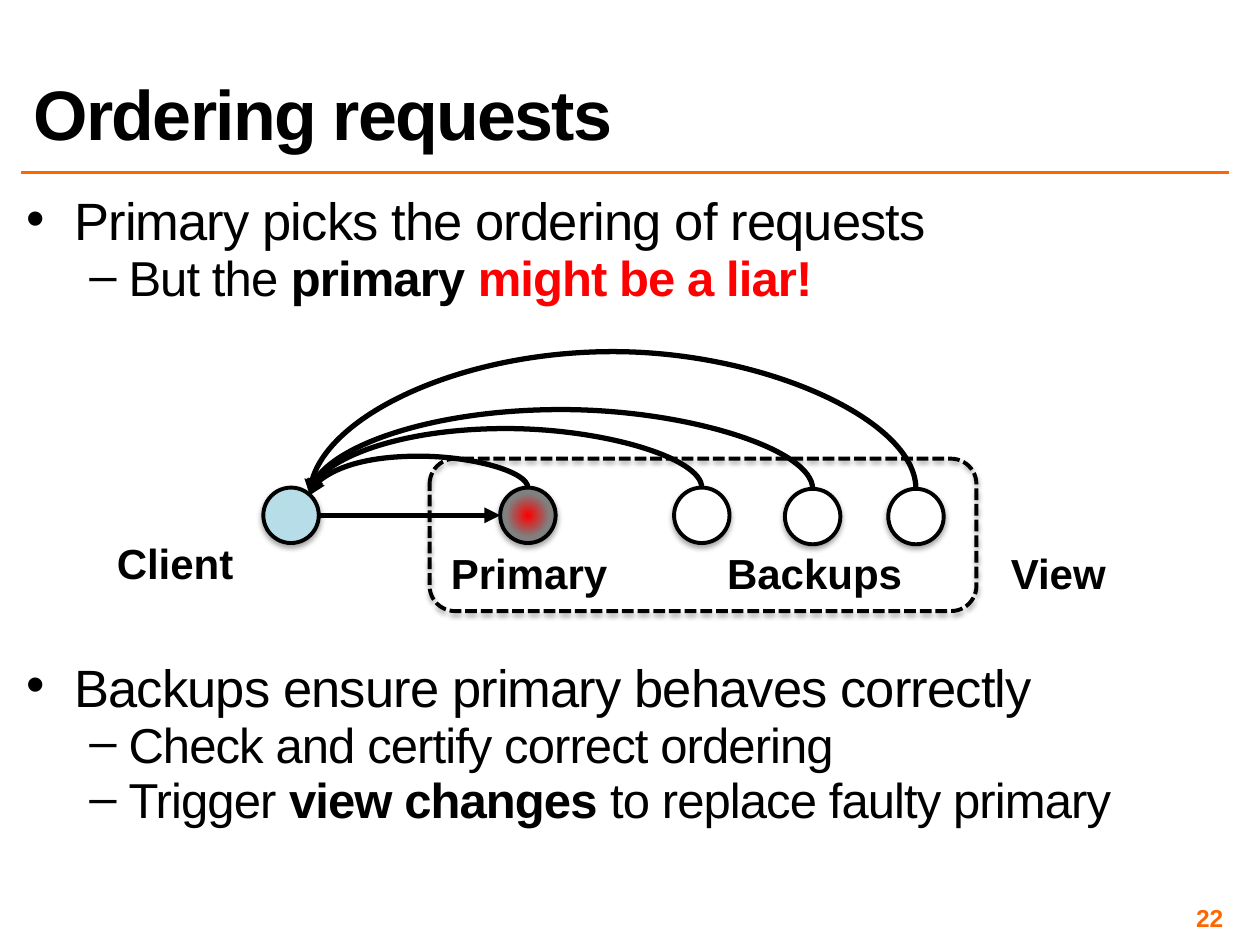
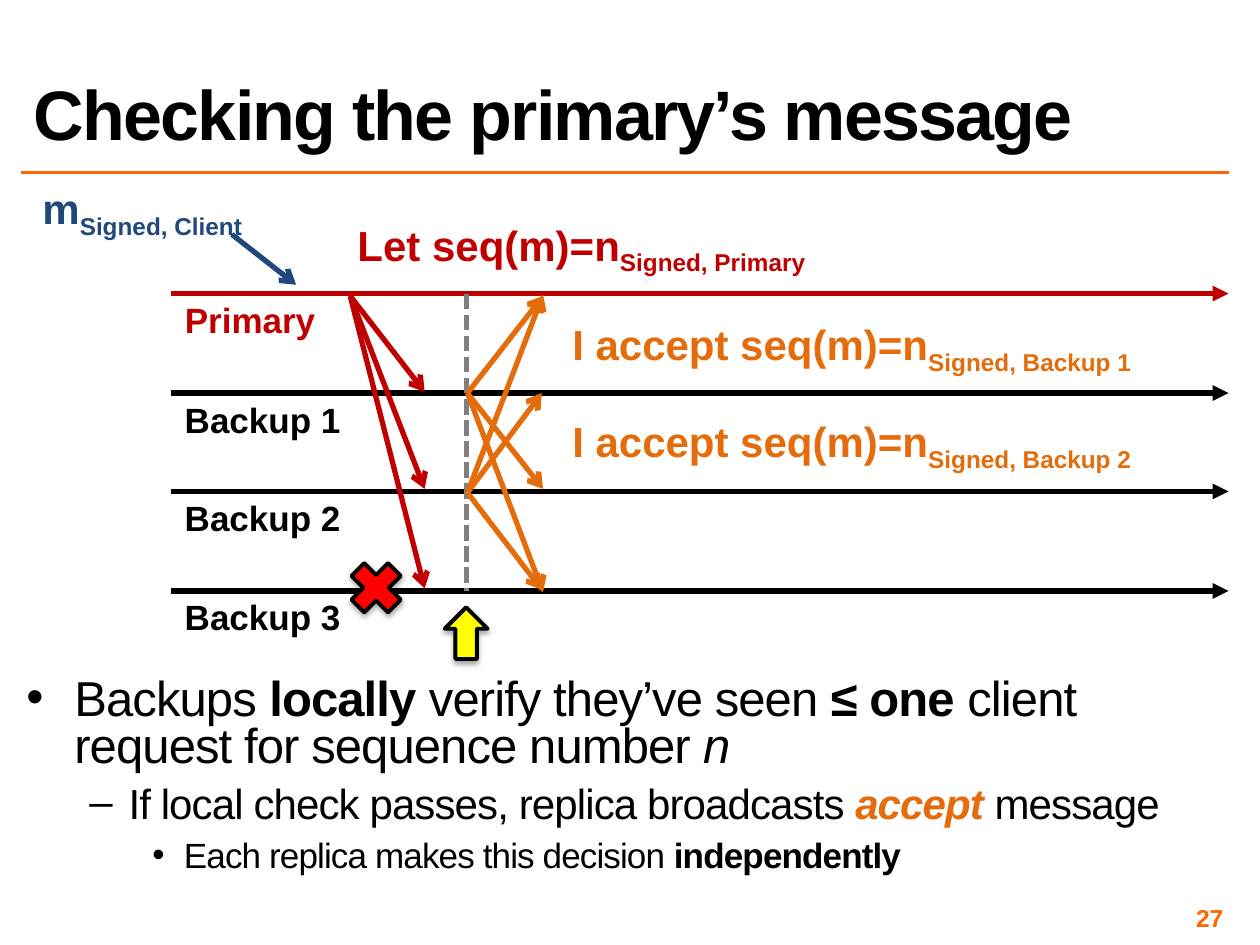
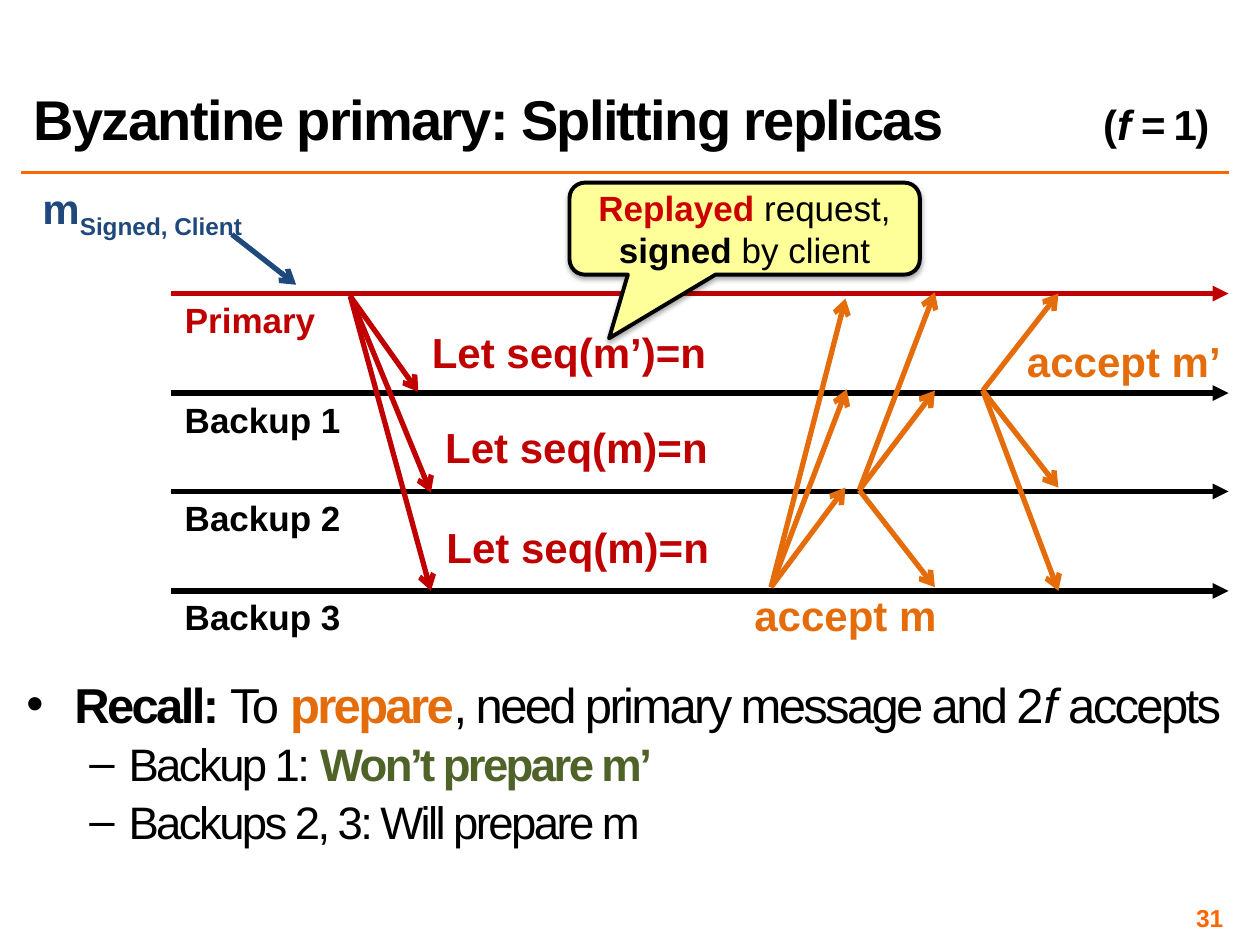
from lxml import etree
from pptx import Presentation
from pptx.dml.color import RGBColor
from pptx.enum.dml import MSO_LINE
from pptx.enum.shapes import MSO_CONNECTOR, MSO_SHAPE
from pptx.enum.text import MSO_ANCHOR, PP_ALIGN
from pptx.oxml.ns import qn
from pptx.util import Inches, Pt

STRAIGHT, CURVE = MSO_CONNECTOR.STRAIGHT, MSO_CONNECTOR.CURVE
OVAL, ROUNDED = MSO_SHAPE.OVAL, MSO_SHAPE.ROUNDED_RECTANGLE
CROSS, UP_ARROW = MSO_SHAPE.CROSS, MSO_SHAPE.UP_ARROW
CALLOUT = MSO_SHAPE.ROUNDED_RECTANGULAR_CALLOUT
DASHED = MSO_LINE.SQUARE_DOT
LEFT, CENTER, RIGHT = PP_ALIGN.LEFT, PP_ALIGN.CENTER, PP_ALIGN.RIGHT
TOP, MIDDLE, BOTTOM = MSO_ANCHOR.TOP, MSO_ANCHOR.MIDDLE, MSO_ANCHOR.BOTTOM

BLACK = RGBColor(0x00, 0x00, 0x00)
WHITE = RGBColor(0xFF, 0xFF, 0xFF)
GRAY = RGBColor(0x80, 0x80, 0x80)
RED = RGBColor(0xFF, 0x00, 0x00)
BRIGHT_ORANGE = RGBColor(0xFF, 0x66, 0x00)
PRIMARY_RED = RGBColor(0xC0, 0x00, 0x00)
REPLAY_RED = RGBColor(0xCC, 0x00, 0x00)
ACCEPT_ORANGE = RGBColor(0xE4, 0x6C, 0x0A)
CLIENT_BLUE = RGBColor(0x1F, 0x49, 0x7D)
CLIENT_FILL = RGBColor(0xB7, 0xDE, 0xE8)
GREEN = RGBColor(0x4F, 0x62, 0x28)
YELLOW = RGBColor(0xFF, 0xFF, 0x00)
PALE_YELLOW = RGBColor(0xFF, 0xFF, 0x99)

FONT = "Arial"
BOLD, ITALIC = {"bold": True}, {"italic": True}
SUBSCRIPT = {"baseline": -25000}
LEVELS = [("•", 0.38, -0.38), ("–", 0.81, -0.31), ("•", 1.25, -0.25)]
LANES = [2.33, 3.12, 3.9, 4.69]


def write(shape, paragraphs, size, color=BLACK, bold=False, align=CENTER,
          anchor=TOP, wrap=False, inset=None, tracking=0):
    """Fill a shape with paragraphs, each a list of (text, style overrides)."""
    frame = shape.text_frame
    frame.word_wrap, frame.vertical_anchor = wrap, anchor
    if inset is not None:
        frame.margin_left = frame.margin_right = Inches(inset)
        frame.margin_top = frame.margin_bottom = Inches(inset)
    for index, runs in enumerate(paragraphs):
        paragraph = frame.add_paragraph() if index else frame.paragraphs[0]
        paragraph.alignment = align
        for text, style in runs:
            run = paragraph.add_run()
            run.text = text
            run.font.name = FONT
            run.font.size = Pt(style.get("size", size))
            run.font.bold = style.get("bold", bold)
            run.font.italic = style.get("italic", False)
            run.font.color.rgb = style.get("color", color)
            properties = run.font._element
            properties.set("spc", str(tracking))
            properties.set("baseline", str(style.get("baseline", 0)))
    return frame


def add_line(slide, start, end, color, tail="none", width=3, kind=STRAIGHT):
    line = slide.shapes.add_connector(kind, *map(Inches, (*start, *end)))
    line.line.color.rgb = color
    line.line.width = Pt(width)
    properties = line._element.spPr
    etree.SubElement(properties.find(qn("a:ln")), qn("a:tailEnd"), type=tail)
    etree.SubElement(properties, qn("a:effectLst"))
    return line


prs = Presentation()
prs.slide_width, prs.slide_height = Inches(10), Inches(7.5)

# Title, body and page number of every slide.
# Body paragraphs: level, size, space before, runs.
pages = [
    (22, 40, [("Ordering requests", {})], (1.59, 5.48), 0.7, -50, [
        (0, 30, 14, [("Primary picks the ordering of requests", {})]),
        (1, 28, 8, [("But the ", {}), ("primary ", BOLD),
                    ("might be a liar!", {"bold": True, "color": RED})]),
        (0, 30, 210, [("Backups ensure primary behaves correctly", {})]),
        (1, 28, 8, [("Check and certify correct ordering", {})]),
        (1, 28, 8, [("Trigger ", {}), ("view changes ", BOLD),
                    ("to replace faulty primary", {})]),
    ]),
    (27, 40, [("Checking the primary’s message", {})], (5.35, 1.8), 0.8, -50, [
        (0, 28, 14, [("Backups ", {}), ("locally", BOLD),
                     (" verify they’ve seen ", {}), ("≤ one ", BOLD),
                     ("client request for sequence number ", {}), ("n", ITALIC)]),
        (1, 24, 8, [("If local check passes, replica broadcasts ", {}),
                    ("accept ", {"bold": True, "italic": True, "color": ACCEPT_ORANGE}),
                    ("message", {})]),
        (2, 20, 8, [("Each replica makes this decision ", {}),
                    ("independently", BOLD)]),
    ]),
    (31, 32, [("Byzantine primary: Splitting replicas", {}), ("\t", {"size": 40}),
              ("(", {"size": 24}), ("f", {"size": 24, "italic": True}),
              (" = 1)", {"size": 24})], (5.4, 1.79), 0.8, -150, [
        (0, 28, 14, [("Recall: ", BOLD), ("To ", {}),
                     ("prepare", {"bold": True, "color": ACCEPT_ORANGE}),
                     (", need primary message and 2", {}), ("f", ITALIC),
                     (" accepts", {})]),
        (1, 26, 8, [("Backup 1: ", {}),
                    ("Won’t prepare m’", {"bold": True, "color": GREEN})]),
        (1, 26, 8, [("Backups 2, 3: Will prepare m", {})]),
    ]),
]

for number, title_size, title, (top, height), spacing, tracking, body in pages:
    slide = prs.slides.add_slide(prs.slide_layouts[6])
    add_line(slide, (0.17, 1.37), (9.75, 1.37), BRIGHT_ORANGE, width=2)

    body_box = slide.shapes.add_textbox(*map(Inches, (0.17, top, 9.58, height)))
    body_runs = [[(text, {"size": size, **style}) for text, style in runs]
                 for _, size, _, runs in body]
    frame = write(body_box, body_runs, 28, align=LEFT, wrap=True, inset=0.04,
                  tracking=tracking)
    for paragraph, (level, _, space, _) in zip(frame.paragraphs, body):
        bullet, margin, indent = LEVELS[level]
        paragraph.level = level
        paragraph.line_spacing, paragraph.space_before = spacing, Pt(space)
        properties = paragraph._p.get_or_add_pPr()
        properties.set("marL", str(Inches(margin)))
        properties.set("indent", str(Inches(indent)))
        etree.SubElement(properties, qn("a:buFont"), typeface=FONT)
        etree.SubElement(properties, qn("a:buChar"), char=bullet)

    number_box = slide.shapes.add_textbox(*map(Inches, (7.42, 7.17, 2.33, 0.23)))
    write(number_box, [[(str(number), {})]], 14, BRIGHT_ORANGE, True, RIGHT,
          MIDDLE, wrap=True, inset=0.04)

    title_box = slide.shapes.add_textbox(*map(Inches, (0.17, 0.1, 9.58, 1.17)))
    heading = write(title_box, [title], title_size, bold=True, align=LEFT,
                    anchor=BOTTOM, wrap=True, tracking=-100).paragraphs[0]
    heading.line_spacing = 0.8
    tabs = etree.SubElement(heading._p.get_or_add_pPr(), qn("a:tabLst"))
    etree.SubElement(tabs, qn("a:tab"), pos=str(Inches(9.33)), algn="r")

ordering, checking, splitting = prs.slides

# Client, replicas and the view around them
outlined = []
for x, y, fill in [(2.09, 3.87, CLIENT_FILL), (3.97, 3.87, None),
                   (5.35, 3.87, WHITE), (6.23, 3.88, WHITE), (7.05, 3.88, WHITE)]:
    node = ordering.shapes.add_shape(OVAL, *map(Inches, (x, y, 0.44, 0.44)))
    if fill is not None:
        node.fill.solid()
        node.fill.fore_color.rgb = fill
    outlined.append(node)
client, primary, *backups = outlined

primary.fill.gradient()
for stop, color, position in zip(primary.fill.gradient_stops, (RED, GRAY), (0, 0.55)):
    stop.color.rgb, stop.position = color, position
gradient = primary._element.spPr.find(qn("a:gradFill"))
gradient.remove(gradient.find(qn("a:lin")))
radial = etree.SubElement(gradient, qn("a:path"), path="circle")
etree.SubElement(radial, qn("a:fillToRect"), dict.fromkeys("ltrb", "50000"))

view = ordering.shapes.add_shape(ROUNDED, *map(Inches, (3.41, 3.64, 4.34, 1.21)))
view.fill.background()
view.line.dash_style = DASHED
outlined.append(view)

# Replies arch from the top of each replica back to the client
reply_x, reply_y = 2.46, 3.93
for replica, x, y, peak in zip([primary, *backups], (4.19, 5.57, 6.45, 7.27),
                               (3.87, 3.87, 3.88, 3.88), (3.62, 3.4, 3.25, 2.79)):
    drop, reach = reply_y - y, x - reply_x
    middle_x, middle_y = (x + reply_x) / 2, (y + reply_y) / 2
    reply = add_line(ordering, (middle_x + drop / 2, middle_y + reach / 2),
                     (middle_x - drop / 2, middle_y - reach / 2),
                     BLACK, "triangle", kind=CURVE)
    properties = reply._element.spPr
    properties.find(qn("a:xfrm")).set("rot", str(270 * 60000))
    etree.SubElement(properties.find(qn("a:prstGeom")).find(qn("a:avLst")), qn("a:gd"),
                     name="adj1", fmla=f"val {round((peak - y) / drop * 100000)}")
    joints = reply._element.find(".//" + qn("p:cNvCxnSpPr"))
    for joint, node, site in [("a:stCxn", replica, 0), ("a:endCxn", client, 7)]:
        etree.SubElement(joints, qn(joint), id=str(node.shape_id), idx=str(site))
add_line(ordering, (2.53, 4.09), (3.97, 4.09), BLACK, "triangle")

# Message timelines
for slide in (checking, splitting):
    for lane, y in enumerate(LANES):
        name, width, color = ((f"Backup {lane}", 1.45, BLACK) if lane
                              else ("Primary", 1.25, PRIMARY_RED))
        add_line(slide, (1.36, y), (9.75, y), color, "triangle")
        lane_label = slide.shapes.add_textbox(
            *map(Inches, (1.36, y - 0.01, width, 0.44)))
        write(lane_label, [[(name, {})]], 20, color, True)
    add_line(slide, (1.84, 1.86), (2.35, 2.26), CLIENT_BLUE, "arrow")

cross = checking.shapes.add_shape(CROSS, *map(Inches, (2.78, 4.46, 0.41, 0.41)))
cross.adjustments[0] = 0.325
cross.rotation = 45
checkpoint = add_line(checking, (3.7, LANES[0]), (3.7, LANES[-1]), GRAY)
checkpoint.line.dash_style = DASHED
pointer = checking.shapes.add_shape(UP_ARROW, *map(Inches, (3.53, 4.82, 0.34, 0.41)))

# Broadcasts: one sender, its receivers
broadcasts = [
    (checking, PRIMARY_RED, (2.78, 2.35), [(3.37, 3.11), (3.37, 3.88), (3.37, 4.67)]),
    (checking, ACCEPT_ORANGE, (3.71, 3.12), [(4.31, 3.88), (4.31, 2.35), (4.31, 4.7)]),
    (checking, ACCEPT_ORANGE, (3.71, 3.91), [(4.3, 4.68), (4.3, 3.12), (4.31, 2.34)]),
    (splitting, PRIMARY_RED, (2.78, 2.35), [(3.32, 3.11), (3.42, 3.91), (3.42, 4.69)]),
    (splitting, ACCEPT_ORANGE, (7.8, 3.1), [(8.4, 3.87), (8.4, 2.33), (8.4, 4.69)]),
    (splitting, ACCEPT_ORANGE, (6.82, 3.89), [(7.42, 4.66), (7.42, 3.1), (7.42, 2.32)]),
    (splitting, ACCEPT_ORANGE, (6.12, 4.66), [(6.71, 2.37), (6.71, 3.87), (6.72, 3.09)]),
]
for slide, color, sender, receivers in broadcasts:
    for receiver in receivers:
        add_line(slide, sender, receiver, color, "arrow")

# Labels: slide, left, top, width, colour, text, subscript
labels = [
    (ordering, 0.82, 4.22, 1.14, BLACK, "Client", ""),
    (ordering, 7.92, 4.3, 0.96, BLACK, "View", ""),
    (ordering, 3.47, 4.3, 1.46, BLACK, "Primary", ""),
    (ordering, 5.66, 4.3, 1.61, BLACK, "Backups", ""),
    (checking, 0.13, 1.4, 2, CLIENT_BLUE, "m", "Signed, Client"),
    (checking, 2.56, 1.69, 4.11, PRIMARY_RED, "Let seq(m)=n", "Signed, Primary"),
    (checking, 4.3, 2.48, 4.92, ACCEPT_ORANGE, "I accept seq(m)=n", "Signed, Backup 1"),
    (checking, 4.3, 3.25, 4.92, ACCEPT_ORANGE, "I accept seq(m)=n", "Signed, Backup 2"),
    (splitting, 0.13, 1.4, 2, CLIENT_BLUE, "m", "Signed, Client"),
    (splitting, 8.05, 2.61, 1.74, ACCEPT_ORANGE, "accept m’", ""),
    (splitting, 3.32, 2.54, 2.39, PRIMARY_RED, "Let seq(m’)=n", ""),
    (splitting, 3.42, 3.3, 2.31, PRIMARY_RED, "Let seq(m)=n", ""),
    (splitting, 3.43, 4.09, 2.31, PRIMARY_RED, "Let seq(m)=n", ""),
    (splitting, 5.88, 4.63, 1.66, ACCEPT_ORANGE, "accept m", ""),
]
for slide, left, top, width, color, text, subscript in labels:
    label = slide.shapes.add_textbox(*map(Inches, (left, top, width, 0.5)))
    runs = [(text, {})] + ([(subscript, SUBSCRIPT)] if subscript else [])
    write(label, [runs], 24, color, True)

replay = splitting.shapes.add_shape(CALLOUT, *map(Inches, (4.52, 1.45, 2.78, 0.73)))
for index, value in enumerate((-0.387, 1.193, 0.167)):
    replay.adjustments[index] = value
write(replay, [[("Replayed ", {"bold": True, "color": REPLAY_RED}), ("request, ", {}),
                ("signed", BOLD), (" by client", {})]], 20, anchor=MIDDLE, wrap=True)

for shape, fill in [(cross, RED), (pointer, YELLOW), (replay, PALE_YELLOW)]:
    shape.fill.solid()
    shape.fill.fore_color.rgb = fill
    outlined.append(shape)

# Black outline and soft shadow below
for shape in outlined:
    shape.line.color.rgb = BLACK
    shape.line.width = Pt(2.25)
    shape.shadow.inherit = False
    effects = shape._element.spPr.find(qn("a:effectLst"))
    shadow = etree.SubElement(effects, qn("a:outerShdw"), blurRad=str(Pt(3.1)),
                              dist=str(Pt(1.8)), dir=str(90 * 60000), rotWithShape="0")
    shade = etree.SubElement(shadow, qn("a:srgbClr"), val=str(BLACK))
    etree.SubElement(shade, qn("a:alpha"), val="35000")

prs.save("out.pptx")
